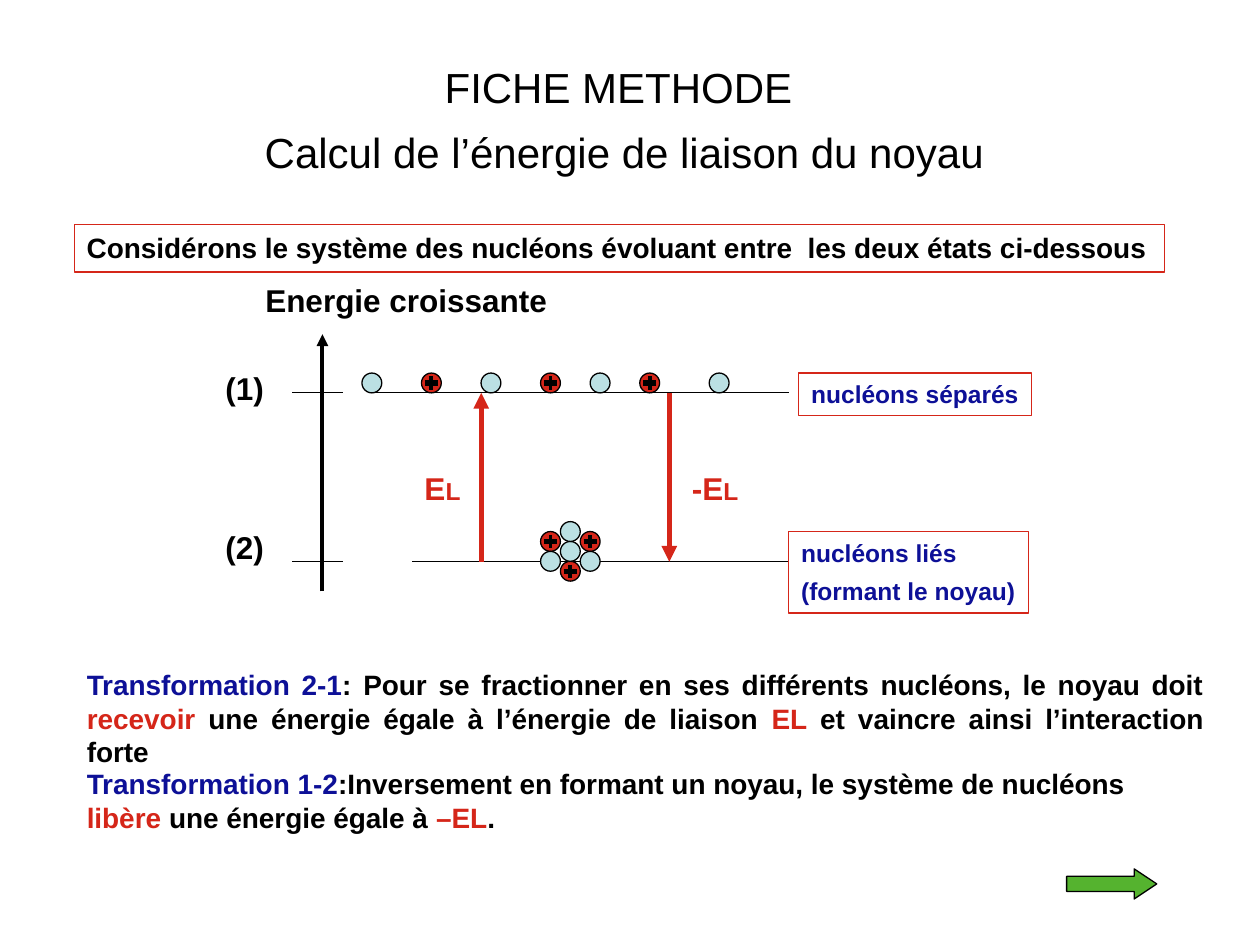
from lxml import etree
from pptx import Presentation
from pptx.dml.color import RGBColor
from pptx.enum.shapes import MSO_CONNECTOR, MSO_SHAPE
from pptx.enum.text import MSO_ANCHOR, MSO_AUTO_SIZE, PP_ALIGN
from pptx.oxml.ns import qn
from pptx.util import Pt

STRAIGHT = MSO_CONNECTOR.STRAIGHT
RECT, OVAL, ARROW = MSO_SHAPE.RECTANGLE, MSO_SHAPE.OVAL, MSO_SHAPE.RIGHT_ARROW
TOP, NONE = MSO_ANCHOR.TOP, MSO_AUTO_SIZE.NONE
LEFT, CENTER, JUSTIFY = PP_ALIGN.LEFT, PP_ALIGN.CENTER, PP_ALIGN.JUSTIFY
BLACK, RED, BLUE, PALE, GREEN = "000000", "D52619", "0D1097", "BBE0E3", "55B32F"
tint = RGBColor.from_string


def write(shape, text, size=16, color=BLACK, bold=True, align=LEFT, gap=0, wrap=True):
    frame = shape.text_frame
    frame.word_wrap = wrap
    frame.auto_size = NONE
    frame.vertical_anchor = TOP
    for i, runs in enumerate(text):
        para = frame.add_paragraph() if i else frame.paragraphs[0]
        para.alignment = align
        para.space_before = Pt(gap if i else 0)
        for part in runs:
            words, hue, high = (part + (color, size)[len(part) - 1:])
            run = para.add_run()
            run.text = words
            run.font.name = "Arial"
            run.font.size = Pt(high)
            run.font.bold = bold
            run.font.color.rgb = tint(hue)


def rule(x1, y1, x2, y2, width=0.75, color=BLACK, head=False):
    line = slide.shapes.add_connector(STRAIGHT, Pt(x1), Pt(y1), Pt(x2), Pt(y2))
    line.line.width = Pt(width)
    line.line.color.rgb = tint(color)
    props = line._element.spPr
    if head:
        etree.SubElement(props.find(qn("a:ln")), qn("a:tailEnd"), type="triangle")
    etree.SubElement(props, qn("a:effectLst"))


deck = Presentation()
deck.slide_width, deck.slide_height = Pt(720), Pt(540)
slide = deck.slides.add_slide(deck.slide_layouts[5])

title = slide.shapes.title
title.left, title.top, title.width, title.height = Pt(116), Pt(31.5), Pt(481.5), Pt(111)
write(
    title,
    [[("FICHE METHODE ",)], [("Calcul de l’énergie de liaison du noyau",)]],
    size=24, bold=False, align=CENTER, gap=8.3,
)

high, low = 224.5, 321
for y, start in ((high, 212.5), (low, 235.5)):
    rule(167, y, 196, y)
    rule(start, y, 451, y)
rule(184.25, 338, 184.25, 191, width=2.25, head=True)
rule(275, low, 275, high, width=3, color=RED, head=True)
rule(382.5, high, 382.5, low, width=3, color=RED, head=True)

disc = 11.34
edge = 206.85
row, core = 213.2, 298.1
balls = [(col, row, PALE) for col in (0, 6, 11.5, 17.5)]
balls += [(col, row, RED) for col in (3, 9, 14)]
balls += [
    (col, core + step * disc, hue)
    for col, step, hue in (
        (10, 2, RED), (11, 0.5, RED), (9, 0.5, RED),
        (10, 1, PALE), (10, 0, PALE), (11, 1.5, PALE), (9, 1.5, PALE),
    )
]
for col, y, hue in balls:
    x = edge + col * disc
    ball = slide.shapes.add_shape(OVAL, Pt(x), Pt(y), Pt(disc), Pt(disc))
    ball.shadow.inherit = False
    ball.fill.solid()
    ball.fill.fore_color.rgb = tint(hue)
    ball.line.color.rgb = tint(BLACK)
    ball.line.width = Pt(0.75)
    if hue == RED:
        mid, half, arm = x + disc / 2, y + disc / 2, disc / 3
        rule(mid, half - arm, mid, half + arm, width=2.25)
        rule(mid - arm, half, mid + arm, half, width=3)

frames = (
    (42.5, 128.2, 623, 27.3, 16, BLACK,
     ["Considérons le système des nucléons évoluant entre  les deux états ci-dessous"]),
    (456.5, 213.2, 133, 24.5, 14, BLUE, ["nucléons séparés"]),
    (450.7, 303.8, 137, 46.5, 14, BLUE, ["nucléons liés", "(formant le noyau)"]),
)
for x, y, w, h, size, hue, lines in frames:
    box = slide.shapes.add_shape(RECT, Pt(x), Pt(y), Pt(w), Pt(h))
    box.shadow.inherit = False
    box.fill.background()
    box.line.color.rgb = tint(RED)
    box.line.width = Pt(0.75)
    write(box, [[(words,)] for words in lines], size=size, color=hue, gap=5, wrap=False)

labels = (
    (144.5, 157, 181, BLACK, [("Energie croissante",)]),
    (121.7, 207.5, 36.5, BLACK, [("(1)",)]),
    (121.7, 298, 36.5, BLACK, [("(2)",)]),
    (235.5, 264.5, 35.5, RED, [("E",), ("L", RED, 14)]),
    (388.3, 264.5, 45.5, RED, [("-E",), ("L", RED, 14)]),
)
for x, y, w, hue, runs in labels:
    label = slide.shapes.add_textbox(Pt(x), Pt(y), Pt(w), Pt(29))
    write(label, [runs], size=18, color=hue, wrap=False)

notes = (
    (378, 652.5, 65, JUSTIFY, [
        ("Transformation 2-1", BLUE),
        (": Pour se fractionner en ses différents nucléons, le noyau doit ",),
        ("recevoir", RED),
        (" une énergie égale à l’énergie de liaison ",),
        ("EL", RED),
        (" et vaincre ainsi l’interaction forte",),
    ]),
    (434.5, 635, 46, LEFT, [
        ("Transformation 1-2", BLUE),
        (":Inversement en formant un noyau, le système de nucléons ",),
        ("libère ", RED),
        ("une énergie égale à ",),
        ("–EL", RED),
        (".",),
    ]),
)
for y, w, h, align, runs in notes:
    note = slide.shapes.add_textbox(Pt(42.5), Pt(y), Pt(w), Pt(h))
    write(note, [runs], align=align)

arrow = slide.shapes.add_shape(ARROW, Pt(609.5), Pt(496.5), Pt(51.5), Pt(17.2))
arrow.shadow.inherit = False
arrow.adjustments[1] = 0.75
arrow.fill.solid()
arrow.fill.fore_color.rgb = tint(GREEN)
arrow.line.color.rgb = tint(BLACK)
arrow.line.width = Pt(0.75)

deck.save("out.pptx")
